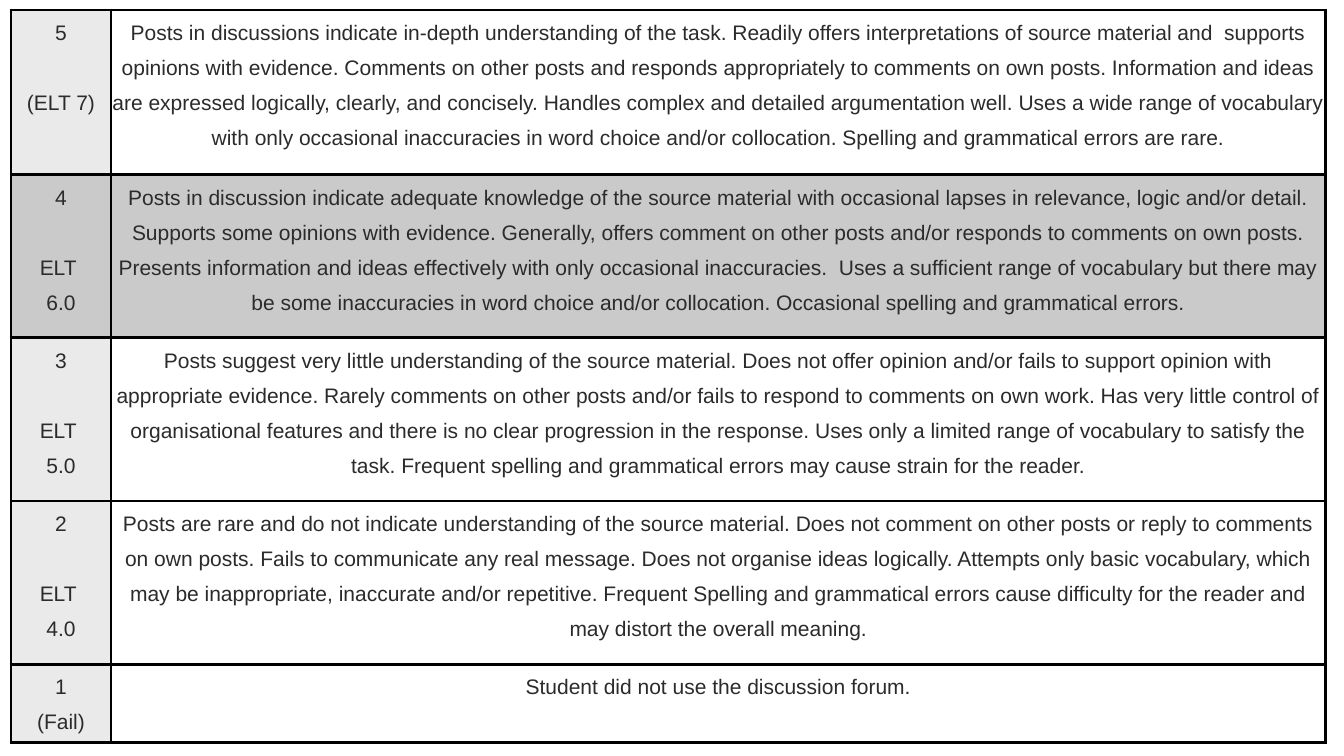
"""Build a slide with a marking scale for discussion posts."""
from lxml.etree import SubElement as Sub
from pptx import Presentation
from pptx.dml.color import RGBColor as RGB
from pptx.enum.text import PP_ALIGN as Align
from pptx.oxml.ns import qn
from pptx.util import Inches, Pt

INK = RGB(0x2B, 0x2B, 0x2B)
PALE = RGB(0xEA, 0xEA, 0xEA)
GREY = RGB(0xCA, 0xCA, 0xCA)
BLACK = RGB(0, 0, 0)

BANDS = [
    (["5", "(ELT 7)"], 1.63, 25, PALE, None,
     "Posts in discussions indicate in-depth understanding of the task. Readily offers "
     "interpretations of source material and  supports opinions with evidence. Comments on other "
     "posts and responds appropriately to comments on own posts. Information and ideas are "
     "expressed logically, clearly, and concisely. Handles complex and detailed argumentation "
     "well. Uses a wide range of vocabulary with only occasional inaccuracies in word choice "
     "and/or collocation. Spelling and grammatical errors are rare."),
    (["4", "ELT ", "6.0"], 1.62, 25, GREY, GREY,
     "Posts in discussion indicate adequate knowledge of the source material with occasional "
     "lapses in relevance, logic and/or detail. Supports some opinions with evidence. Generally, "
     "offers comment on other posts and/or responds to comments on own posts. Presents "
     "information and ideas effectively with only occasional inaccuracies. \u00a0Uses a "
     "sufficient range of vocabulary but there may be some inaccuracies in word choice and/or "
     "collocation. Occasional spelling and grammatical errors."),
    (["3", "ELT ", "5.0"], 1.62, 25, PALE, None,
     "Posts suggest very little understanding of the source material. Does not offer opinion "
     "and/or fails to support opinion with appropriate evidence. Rarely comments on other posts "
     "and/or fails to respond to comments on own work. Has very little control of organisational "
     "features and there is no clear progression in the response. Uses only a limited range of "
     "vocabulary to satisfy the task. Frequent spelling and grammatical errors may cause strain "
     "for the reader."),
    (["2", "ELT ", "4.0"], 1.62, 25, PALE, None,
     "Posts are rare and do not indicate understanding of the source material. Does not comment "
     "on other posts or reply to comments on own posts. Fails to communicate any real message. "
     "Does not organise ideas logically. Attempts only basic vocabulary, which may be "
     "inappropriate, inaccurate and/or repetitive. Frequent Spelling and grammatical errors "
     "cause difficulty for the reader and may distort the overall meaning."),
    (["1", "(Fail)"], 0.78, 0, PALE, None,
     "Student did not use the discussion forum."),
]


def write(frame, lines, font="Arial", size=15, color=INK, space=1.5, gap=0):
    """Fill a frame with centred lines, with a gap after the first."""
    for i, line in enumerate(lines):
        para = frame.paragraphs[0] if i == 0 else frame.add_paragraph()
        para.alignment = Align.CENTER
        para.line_spacing = space
        para.space_after = Pt(0 if i else gap)
        run = para.add_run()
        run.text = line
        run.font.name = font
        run.font.size = Pt(size)
        run.font.color.rgb = color


class Deck:
    """Hold the border style and the current slide."""

    def __init__(self, show, line=BLACK, width=2.25):
        self.slide = show.slides.add_slide(show.slide_layouts[6])
        self.line, self.width = line, width

    def border(self, cell):
        """Draw all four edges of a cell."""
        props = cell._tc.get_or_add_tcPr()
        for side in ("lnL", "lnR", "lnT", "lnB"):
            edge = Sub(props, qn("a:" + side), w=str(Pt(self.width)))
            Sub(Sub(edge, qn("a:solidFill")), qn("a:srgbClr"), val=str(self.line))

    def cell(self, cell, lines, fill, gap=0):
        """Format one cell and write its lines."""
        cell.margin_left = cell.margin_right = cell.margin_top = cell.margin_bottom = 0
        self.border(cell)
        if fill is None:
            cell.fill.background()
        else:
            cell.fill.solid()
            cell.fill.fore_color.rgb = fill
        write(cell.text_frame, lines, gap=gap)

    def scale(self, bands, left, top, widths):
        """Add the table of bands."""
        height = sum(band[1] for band in bands)
        table = self.slide.shapes.add_table(
            len(bands), len(widths), Inches(left), Inches(top),
            Inches(sum(widths)), Inches(height)).table
        table.first_row = table.horz_banding = False
        for col, width in zip(table.columns, widths):
            col.width = Inches(width)
        for row, (marks, tall, gap, shade, fill, text) in zip(table.rows, bands):
            row.height = Inches(tall)
            self.cell(row.cells[0], marks, shade, gap)
            self.cell(row.cells[1], [text], fill)


show = Presentation()
show.slide_width, show.slide_height = Inches(13.33), Inches(7.5)
Deck(show).scale(BANDS, 0.11, 0.1, [0.99, 12.05])
show.save("out.pptx")
